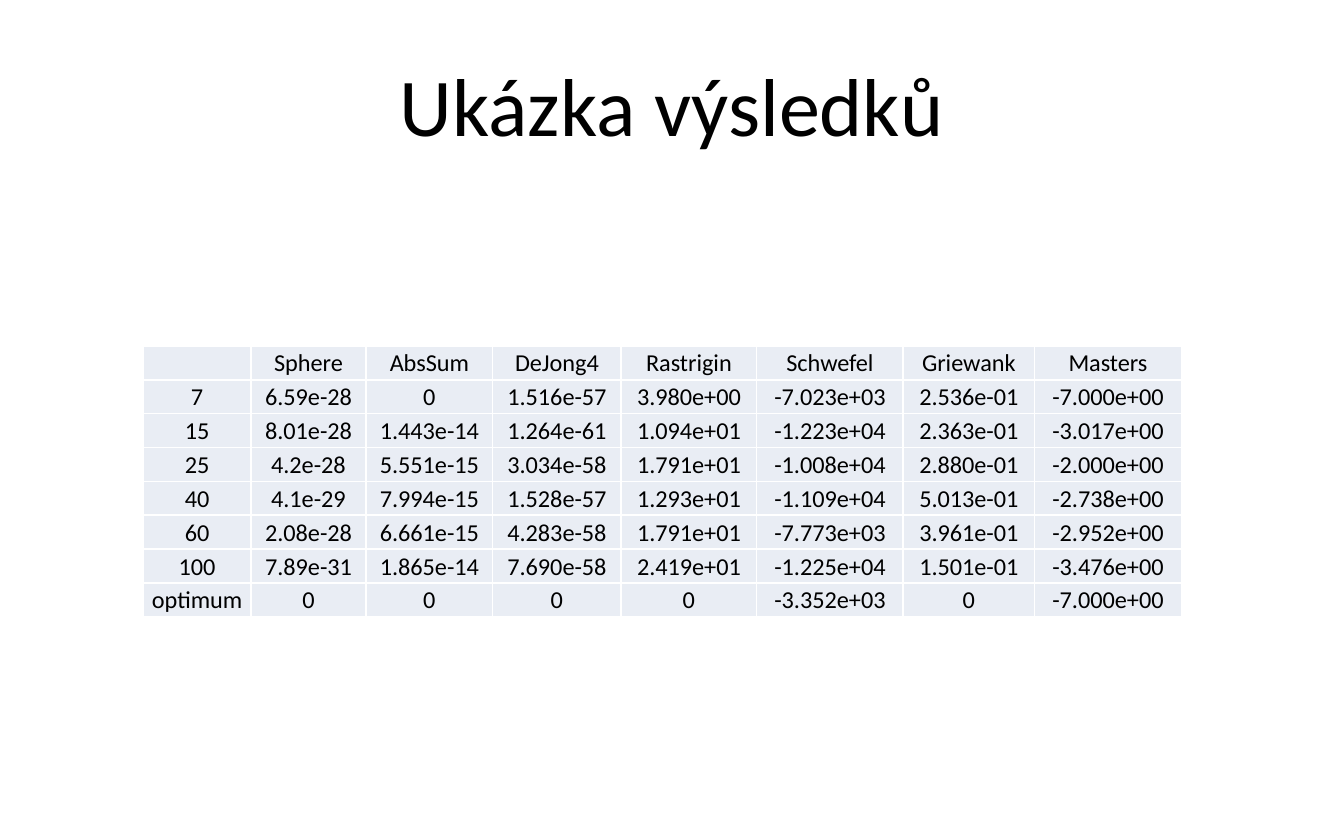
from dataclasses import dataclass

from lxml.etree import SubElement
from pptx import Presentation
from pptx.dml.color import RGBColor
from pptx.enum.text import MSO_ANCHOR as Anchor, PP_ALIGN as Align
from pptx.oxml.ns import qn
from pptx.slide import Slide
from pptx.table import _Cell as Cell
from pptx.text.text import TextFrame
from pptx.util import Cm, Pt

COLORS = {"text": "000000", "cell": "E9EDF4", "border": "FFFFFF"}
FONT = "Calibri"
TITLE_SIZE, CELL_SIZE = 44, 13
ROW_HEIGHT = 0.64
BORDER_WIDTH = 1


@dataclass(frozen=True)
class Column:
    heading: str
    width: float
    values: tuple[str, ...]


COLUMNS = (
    Column("", 2.03, ("7", "15", "25", "40", "60", "100", "optimum")),
    Column("Sphere", 2.18, ("6.59e-28", "8.01e-28", "4.2e-28", "4.1e-29",
                            "2.08e-28", "7.89e-31", "0")),
    Column("AbsSum", 2.39, ("0", "1.443e-14", "5.551e-15", "7.994e-15",
                            "6.661e-15", "1.865e-14", "0")),
    Column("DeJong4", 2.43, ("1.516e-57", "1.264e-61", "3.034e-58", "1.528e-57",
                             "4.283e-58", "7.690e-58", "0")),
    Column("Rastrigin", 2.56, ("3.980e+00", "1.094e+01", "1.791e+01", "1.293e+01",
                               "1.791e+01", "2.419e+01", "0")),
    Column("Schwefel", 2.77, ("-7.023e+03", "-1.223e+04", "-1.008e+04", "-1.109e+04",
                              "-7.773e+03", "-1.225e+04", "-3.352e+03")),
    Column("Griewank", 2.48, ("2.536e-01", "2.363e-01", "2.880e-01", "5.013e-01",
                              "3.961e-01", "1.501e-01", "0")),
    Column("Masters", 2.78, ("-7.000e+00", "-3.017e+00", "-2.000e+00", "-2.738e+00",
                             "-2.952e+00", "-3.476e+00", "-7.000e+00")),
)


def write_centered(frame: TextFrame, text: str, size: int) -> None:
    para = frame.paragraphs[0]
    para.alignment = Align.CENTER
    if not text:
        # An empty cell still needs the font size, or its row grows.
        SubElement(para._p, qn("a:endParaRPr"), sz=str(size * 100))
        return
    span = para.add_run()
    span.text = text
    span.font.name = FONT
    span.font.size = Pt(size)
    span.font.color.rgb = RGBColor.from_string(COLORS["text"])


def add_borders(cell: Cell) -> None:
    """Put a line on all four sides; call before the fill, which must follow."""
    properties = cell._tc.get_or_add_tcPr()
    for side in ("a:lnL", "a:lnR", "a:lnT", "a:lnB"):
        line = SubElement(properties, qn(side), w=str(Pt(BORDER_WIDTH)))
        fill = SubElement(line, qn("a:solidFill"))
        SubElement(fill, qn("a:srgbClr"), val=COLORS["border"])


def fill_cell(cell: Cell, text: str) -> None:
    cell.vertical_anchor = Anchor.MIDDLE
    cell.margin_left = cell.margin_right = cell.margin_top = Cm(0.03)
    cell.margin_bottom = Cm(0)
    add_borders(cell)
    cell.fill.solid()
    cell.fill.fore_color.rgb = RGBColor.from_string(COLORS["cell"])
    write_centered(cell.text_frame, text, CELL_SIZE)


def add_title(slide: Slide, text: str) -> None:
    box = slide.shapes.add_textbox(Cm(1.27), Cm(0.64), Cm(22.86), Cm(2.64))
    frame = box.text_frame
    frame.word_wrap = True
    frame.vertical_anchor = Anchor.MIDDLE
    write_centered(frame, text, TITLE_SIZE)


def add_results(slide: Slide, columns: tuple[Column, ...]) -> None:
    row_count = 1 + len(columns[0].values)
    width = sum(column.width for column in columns)
    frame = slide.shapes.add_table(row_count, len(columns), Cm(2.71), Cm(6.54),
                                   Cm(width), Cm(row_count * ROW_HEIGHT))
    table = frame.table
    table.first_row = table.horz_banding = False
    for row in table.rows:
        row.height = Cm(ROW_HEIGHT)
    for index, column in enumerate(columns):
        table.columns[index].width = Cm(column.width)
        for row_index, text in enumerate((column.heading, *column.values)):
            fill_cell(table.cell(row_index, index), text)


def main() -> None:
    deck = Presentation()
    deck.slide_width, deck.slide_height = Cm(25.4), Cm(15.88)
    slide = deck.slides.add_slide(deck.slide_layouts[6])
    add_title(slide, "Ukázka výsledků")
    add_results(slide, COLUMNS)
    deck.save("out.pptx")


if __name__ == "__main__":
    main()
